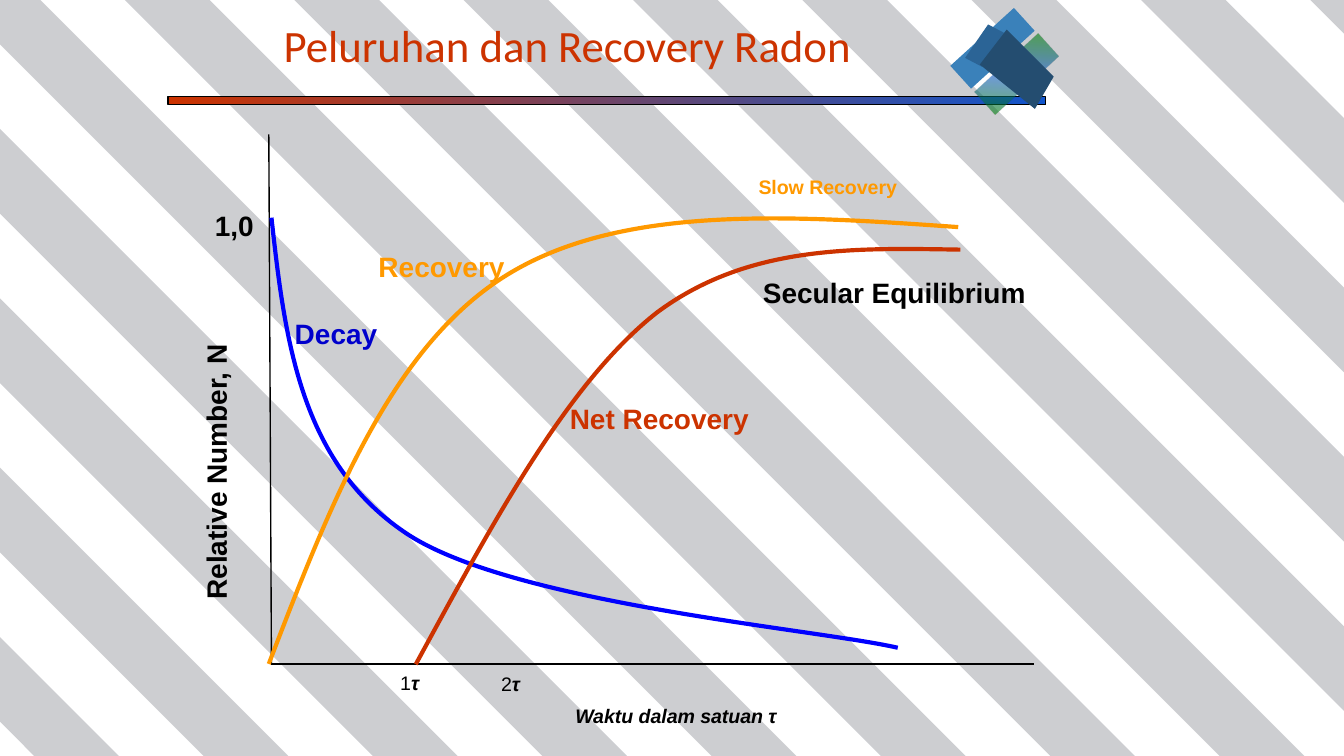
import lxml.etree
import pptx
import pptx.dml.color
import pptx.enum.shapes
import pptx.enum.text
import pptx.oxml.ns
import pptx.util

Inches = pptx.util.Inches
qn = pptx.oxml.ns.qn
SHAPES = pptx.enum.shapes.MSO_SHAPE
ALIGN = pptx.enum.text.PP_ALIGN

WIDTH, HEIGHT = 10, 5.625
STRIPE_STEP, STRIPE_WIDTH = 1.26, 0.63
COLORS = {
    "stripe": "272C3B", "red": "CC3300", "royal": "1155CC", "green": "008000",
    "steel": "3A81BA", "face": "2B6496", "side": "244D70", "black": "000000",
    "decay": "0000FF", "decay label": "0000CC", "orange": "FF9900",
}


def rgb(name):
    return pptx.dml.color.RGBColor.from_string(COLORS[name])


def set_alpha(color_element, percent):
    lxml.etree.SubElement(color_element, qn("a:alpha"), val=str(percent * 1000))


def fill_solid(shape, color, alpha=100):
    shape.shadow.inherit = False
    shape.line.fill.background()
    shape.fill.solid()
    shape.fill.fore_color.rgb = rgb(color)
    if alpha < 100:
        set_alpha(shape.fill._xPr.find(".//" + qn("a:srgbClr")), alpha)


def fill_gradient(shape, colors, angle=0, alpha=100):
    """Spread the colours evenly; the angle runs clockwise."""
    shape.fill.gradient()
    shape.fill.gradient_angle = -angle % 360
    stops = shape.fill._xPr.find(".//" + qn("a:gsLst"))
    for stop in list(stops):
        stops.remove(stop)
    for index, color in enumerate(colors):
        position = round(100000 * index / (len(colors) - 1))
        stop = lxml.etree.SubElement(stops, qn("a:gs"), pos=str(position))
        element = lxml.etree.SubElement(stop, qn("a:srgbClr"), val=COLORS[color])
        if alpha < 100:
            set_alpha(element, alpha)


def add_outline(page, points, close=True):
    corners = [(Inches(x), Inches(y)) for x, y in points]
    builder = page.shapes.build_freeform(*corners[0])
    builder.add_line_segments(corners[1:], close=close)
    return builder.convert_to_shape()


def add_curve(page, points, color, rotation=0):
    """Draw Bezier segments: a start, then two handles and an end for each."""
    curve = add_outline(page, points, close=False)
    outline = curve._element.find(".//" + qn("a:path"))
    steps = outline.findall(qn("a:lnTo"))
    for first in range(0, len(steps), 3):
        bezier = lxml.etree.SubElement(outline, qn("a:cubicBezTo"))
        for step in steps[first:first + 3]:
            bezier.append(step[0])
            outline.remove(step)
    curve.shadow.inherit = False
    curve.fill.background()
    curve.line.color.rgb = rgb(color)
    curve.line.width = pptx.util.Pt(2.25)
    curve.rotation = rotation


def add_block(page, kind, left, top, width, height, color, rotation=0):
    block = page.shapes.add_shape(
        kind, Inches(left), Inches(top), Inches(width), Inches(height))
    fill_solid(block, color)
    block.rotation = rotation
    return block


def add_axis(page, start, end):
    axis = page.shapes.add_connector(
        pptx.enum.shapes.MSO_CONNECTOR.STRAIGHT,
        *[Inches(value) for value in start + end])
    axis.line.color.rgb = rgb("black")
    axis.line.width = pptx.util.Pt(0.75)
    lxml.etree.SubElement(axis._element.spPr, qn("a:effectLst"))


def add_span(para, text, size, color, font="Arial", bold=False, italic=False):
    span = para.add_run()
    span.text = text
    span.font.name = font
    span.font.size = pptx.util.Pt(size)
    span.font.bold = bold
    span.font.italic = italic
    span.font.color.rgb = rgb(color)


def add_label(page, left, top, width, height=0.37, align=ALIGN.CENTER):
    box = page.shapes.add_textbox(
        Inches(left), Inches(top), Inches(width), Inches(height))
    box.text_frame.word_wrap = True
    para = box.text_frame.paragraphs[0]
    para.alignment = align
    return box, para


def add_stripes(page):
    """Diagonal bands at 45 degrees, clipped to the slide."""
    def edge(x):
        x = min(x, WIDTH)
        top, bottom = max(0, -x), min(HEIGHT, WIDTH - x)
        return (x + top, top), (x + bottom, bottom)

    for index in range(13):
        left = -5.37 + index * STRIPE_STEP
        right = left + STRIPE_WIDTH
        points = [*edge(left), *reversed(edge(right))]
        if left < 0 < right:
            points.append((0, 0))
        fill_solid(add_outline(page, points), "stripe", alpha=23)


def add_title(page):
    title = page.shapes.title
    title.left, title.top = Inches(2.01), Inches(0.1)
    title.width, title.height = Inches(6.19), Inches(0.53)
    page.shapes._spTree.append(title._element)  # in front of the stripes
    frame = title.text_frame
    frame.auto_size = pptx.enum.text.MSO_AUTO_SIZE.NONE
    frame.vertical_anchor = pptx.enum.text.MSO_ANCHOR.BOTTOM
    frame.margin_left = frame.margin_right = Inches(0.1)
    frame.margin_top = frame.margin_bottom = Inches(0.1)
    frame.paragraphs[0].alignment = ALIGN.LEFT
    add_span(frame.paragraphs[0], "Peluruhan dan Recovery Radon", 24, "red", "Calibri")


def add_ornament(page):
    bar = add_block(page, SHAPES.RECTANGLE, 1.25, 0.72, 6.53, 0.06, "red")
    fill_gradient(bar, ["red", "royal"])
    bar.line.color.rgb = rgb("black")
    bar.line.width = pptx.util.Pt(0.75)
    green = add_block(page, SHAPES.RECTANGLE, 7.45, 0.23, 0.23, 0.64, "green", 47.7)
    fill_gradient(green, ["green", "royal", "green"], angle=45, alpha=60)
    add_block(page, SHAPES.RECTANGLE, 7.27, 0.04, 0.23, 0.64, "steel", 47.7)
    add_block(page, SHAPES.FLOWCHART_DATA, 7.24, 0.19, 0.18, 0.3, "face", 27.7)
    side = add_outline(page, [(7.49, 0.22), (7.84, 0.57), (7.7, 0.81), (7.29, 0.48)])
    fill_solid(side, "side")


def add_plot(page):
    # Axes
    add_axis(page, (2, 1), (2.02, 4.94))
    add_axis(page, (2.02, 4.94), (7.69, 4.94))

    # Curves
    add_curve(page, [(2.02, 1.62), (2.12, 2.52), (2.23, 3.43), (3.01, 3.96),
                     (3.78, 4.49), (6.07, 4.68), (6.68, 4.82)], "decay")
    add_curve(page, [(2, 4.94), (2.45, 3.77), (2.9, 2.6), (3.75, 2.06),
                     (4.6, 1.52), (5.86, 1.6), (7.13, 1.69)], "orange")
    add_curve(page, [(3.18, 5.05), (3.69, 3.98), (4.19, 2.9), (4.83, 2.34),
                     (5.48, 1.8), (6.27, 1.78), (7.06, 1.75)], "red", 3.1)

    # Curve and axis labels
    for text, left, top, width, size, color, italic in [
        ("Decay", 2, 2.31, 1, 15, "decay label", False),
        ("Recovery", 2.69, 1.81, 1.19, 15, "orange", False),
        ("Net Recovery", 4, 2.94, 1.81, 15, "red", False),
        ("Secular Equilibrium", 5.5, 2, 2.31, 15, "black", False),
        ("Slow Recovery", 5.38, 1.25, 1.56, 10.5, "orange", False),
        ("Waktu dalam satuan τ", 3.81, 5.19, 2.44, 10.5, "black", True),
    ]:
        box, para = add_label(page, left, top, width)
        add_span(para, text, size, color, bold=True, italic=italic)
    box, para = add_label(page, 1.5, 1.5, 0.52, align=ALIGN.LEFT)
    add_span(para, "1,0", 15, "black", bold=True)
    box, para = add_label(page, 0.51, 3.29, 2.19, 0.35, ALIGN.LEFT)
    box.rotation = 270
    add_span(para, "Relative Number, N", 15, "black", bold=True)

    # Time marks
    for number, left, top in [("1", 2.88, 4.94), ("2", 3.63, 4.95)]:
        box, para = add_label(page, left, top, 0.44, 0.28, ALIGN.LEFT)
        add_span(para, number, 10.5, "black")
        add_span(para, "τ", 10.5, "black", bold=True, italic=True)


def main():
    deck = pptx.Presentation()
    deck.slide_width, deck.slide_height = Inches(WIDTH), Inches(HEIGHT)
    page = deck.slides.add_slide(deck.slide_layouts[5])
    add_stripes(page)
    add_title(page)
    add_ornament(page)
    add_plot(page)
    deck.save("out.pptx")


if __name__ == "__main__":
    main()
